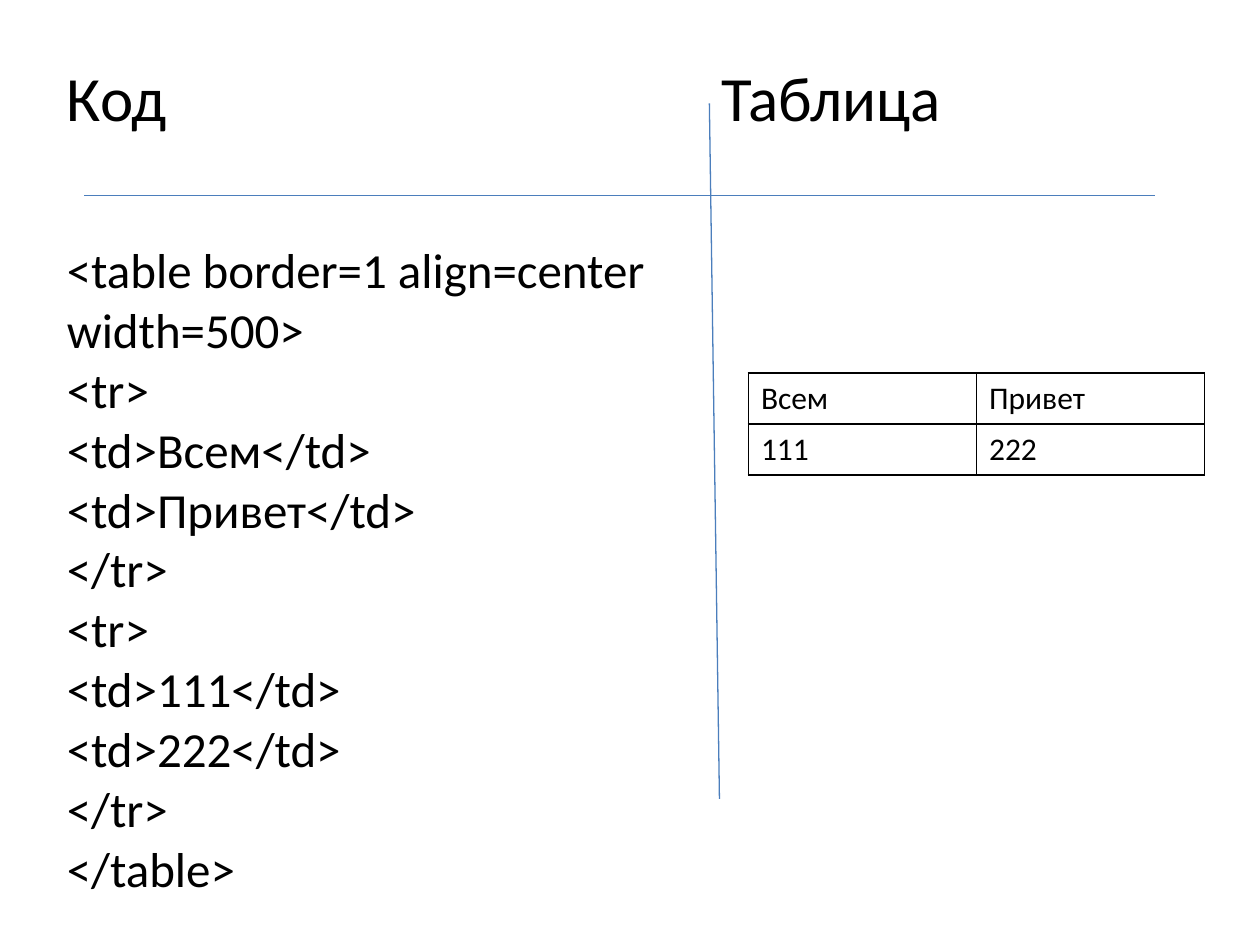
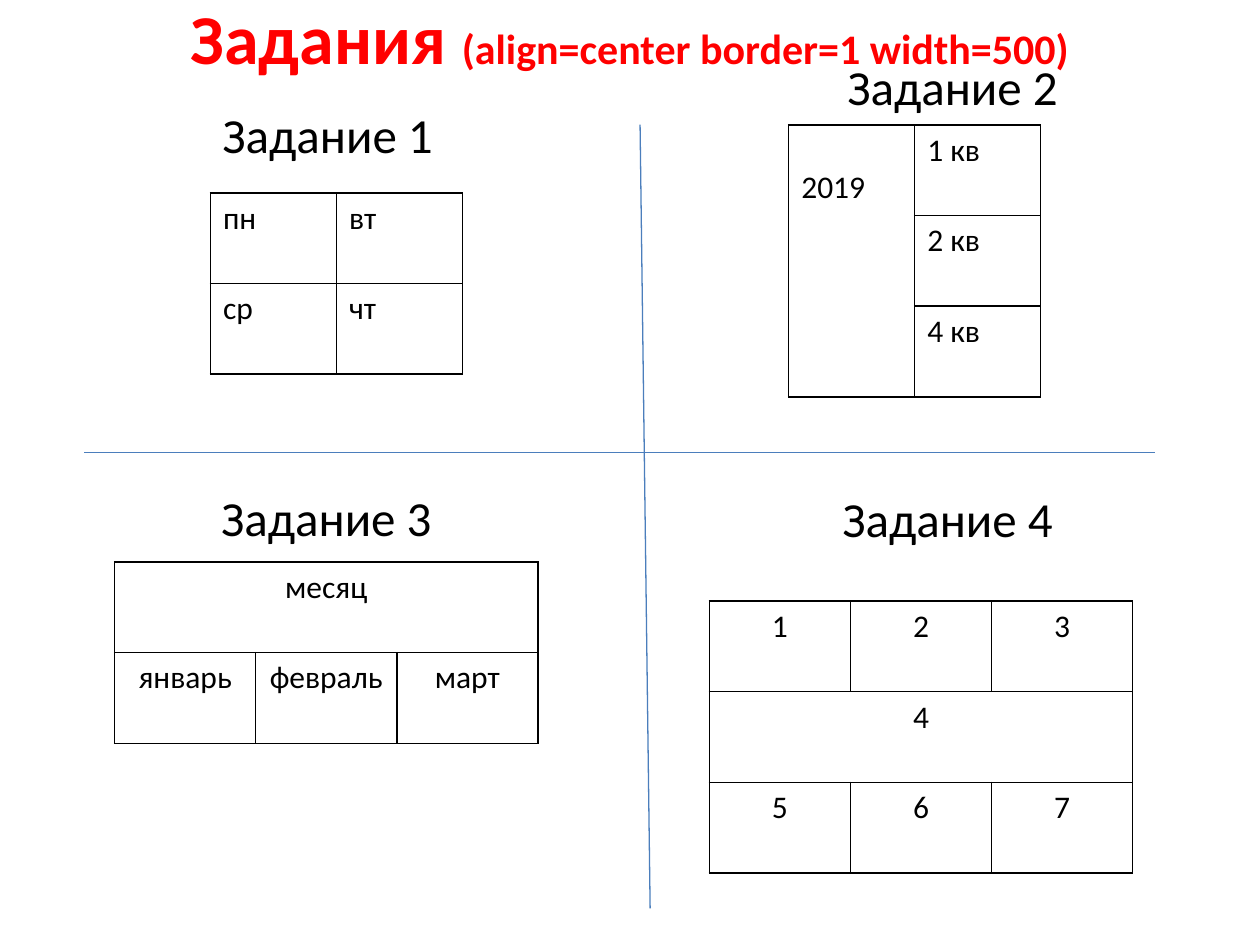
from lxml import etree
from pptx import Presentation
from pptx.dml.color import RGBColor
from pptx.enum.shapes import MSO_CONNECTOR
from pptx.enum.text import MSO_AUTO_SIZE, PP_ALIGN
from pptx.oxml import parse_xml
from pptx.oxml.ns import nsdecls, qn
from pptx.util import Inches, Pt

FONT = "Calibri"
BLACK, RED, BLUE = "000000", "FF0000", "4B7EBC"
LEFT, CENTER = PP_ALIGN.LEFT, PP_ALIGN.CENTER

CODE = [
    "<table border=1 align=center width=500>",
    "<tr>", "<td>Всем</td>", "<td>Привет</td>", "</tr>",
    "<tr>", "<td>111</td>", "<td>222</td>", "</tr>",
    "</table>",
]
LESSON = [["Код", "Таблица"], ["\n".join(CODE), ""]]
LESSON_BOX = (0.43, 0.44, [5.2, 3.78], [1.43, 5.11])
RESULT = [["Всем", "Привет"], ["111", "222"]]

# Straight dividers: from x, from y, to x, to y
LESSON_LINES = [(0.67, 1.55, 9.17, 1.55), (5.63, 0.82, 5.71, 6.34)]
TASK_LINES = [(0.67, 3.59, 9.17, 3.59), (5.08, 0.99, 5.16, 7.21)]

TASK_TITLE = [("Задания ", 40), ("(align=center border=1 width=500)", 24)]
TASK_ROW, TEXT_LINE = 0.72, 0.3
# None marks a cell covered by a merge; "merge" gives its first and last cell
TASKS = [
    dict(label="Задание 1", label_at=(0.67, 0.78), at=(1.67, 1.53), col=1,
         align=LEFT, rows=[["пн", "вт"], ["ср", "чт"]]),
    dict(label="Задание 2", label_at=(5.63, 0.4), at=(6.26, 0.99), col=1,
         align=LEFT, merge=((0, 0), (2, 0)),
         rows=[["2019", "1 кв"], [None, "2 кв"], [None, "4 кв"]]),
    dict(label="Задание 3", label_at=(0.66, 3.82), at=(0.91, 4.46), col=1.12,
         align=CENTER, merge=((0, 0), (0, 2)),
         rows=[["месяц", None, None], ["январь", "февраль", "март"]]),
    dict(label="Задание 4", label_at=(5.59, 3.83), at=(5.63, 4.77), col=1.12,
         align=CENTER, merge=((1, 0), (1, 2)),
         rows=[["1", "2", "3"], ["4", None, None], ["5", "6", "7"]]),
]


def color(value):
    return RGBColor.from_string(value)


def style_span(span, size, fill=BLACK, bold=False):
    span.font.name = FONT
    span.font.size = Pt(size)
    span.font.bold = bold
    span.font.color.rgb = color(fill)


def add_line(page, x1, y1, x2, y2):
    line = page.shapes.add_connector(
        MSO_CONNECTOR.STRAIGHT, Inches(x1), Inches(y1), Inches(x2), Inches(y2))
    line.line.color.rgb = color(BLUE)
    line.line.width = Pt(0.75)
    etree.SubElement(line._element.spPr, qn("a:effectLst"))


def add_heading(page, at, width, height, spans, fill=BLACK, bold=False):
    """Add one centred line made of (text, size) spans."""
    box = page.shapes.add_textbox(
        Inches(at[0]), Inches(at[1]), Inches(width), Inches(height))
    box.text_frame.word_wrap = True
    box.text_frame.auto_size = MSO_AUTO_SIZE.SHAPE_TO_FIT_TEXT
    para = box.text_frame.paragraphs[0]
    para.alignment = CENTER
    for text, size in spans:
        span = para.add_run()
        span.text = text
        style_span(span, size, fill, bold)


def add_borders(cell):
    """Draw a 1 pt black line on all four sides of a cell."""
    properties = cell._tc.get_or_add_tcPr()
    for index, side in enumerate(("lnL", "lnR", "lnT", "lnB")):
        properties.insert(index, parse_xml(
            f'<a:{side} {nsdecls("a")} w="{Pt(1)}"><a:solidFill>'
            f'<a:srgbClr val="{BLACK}"/></a:solidFill></a:{side}>'))


def add_grid(page, left, top, columns, heights, rows, sizes,
             align=LEFT, merge=None, bordered=True):
    """Add an unfilled table; sizes holds one text size per row."""
    table = page.shapes.add_table(
        len(heights), len(columns), Inches(left), Inches(top),
        Inches(sum(columns)), Inches(sum(heights))).table
    table.first_row = table.horz_banding = False
    for column, width in zip(table.columns, columns):
        column.width = Inches(width)
    for row, height in zip(table.rows, heights):
        row.height = Inches(height)
    if merge:
        first, last = merge
        table.cell(*first).merge(table.cell(*last))
    for r, texts in enumerate(rows):
        for c, text in enumerate(texts):
            cell = table.cell(r, c)
            cell.fill.background()
            if bordered:
                add_borders(cell)
            if not text:
                continue
            cell.text_frame.text = text
            for para in cell.text_frame.paragraphs:
                para.alignment = align
                for span in para.runs:
                    style_span(span, sizes[r])
    return table


def build_lesson(page):
    add_grid(page, *LESSON_BOX, LESSON, [36, 28], bordered=False)
    add_grid(page, 5.94, 2.96, [1.81] * 2, [0.405] * 2, RESULT, [18] * 2)
    for ends in LESSON_LINES:
        add_line(page, *ends)


def build_tasks(page):
    for ends in TASK_LINES:
        add_line(page, *ends)
    add_heading(page, (0.67, -0.09), 8.66, 0.77, TASK_TITLE, RED, True)
    for task in TASKS:
        rows = task["rows"]
        table = add_grid(
            page, *task["at"], [task["col"]] * len(rows[0]),
            [TASK_ROW] * len(rows), rows, [18] * len(rows),
            task["align"], task.get("merge"))
        if rows[0][0] == "2019":
            table.cell(0, 0).margin_top = Inches(0.05 + TEXT_LINE)
        add_heading(page, task["label_at"], 3.86, 0.57, [(task["label"], 28)])


def main():
    deck = Presentation()
    deck.slide_width, deck.slide_height = Inches(10), Inches(7.5)
    for build in (build_lesson, build_tasks):
        build(deck.slides.add_slide(deck.slide_layouts[6]))
    deck.save("out.pptx")


if __name__ == "__main__":
    main()
